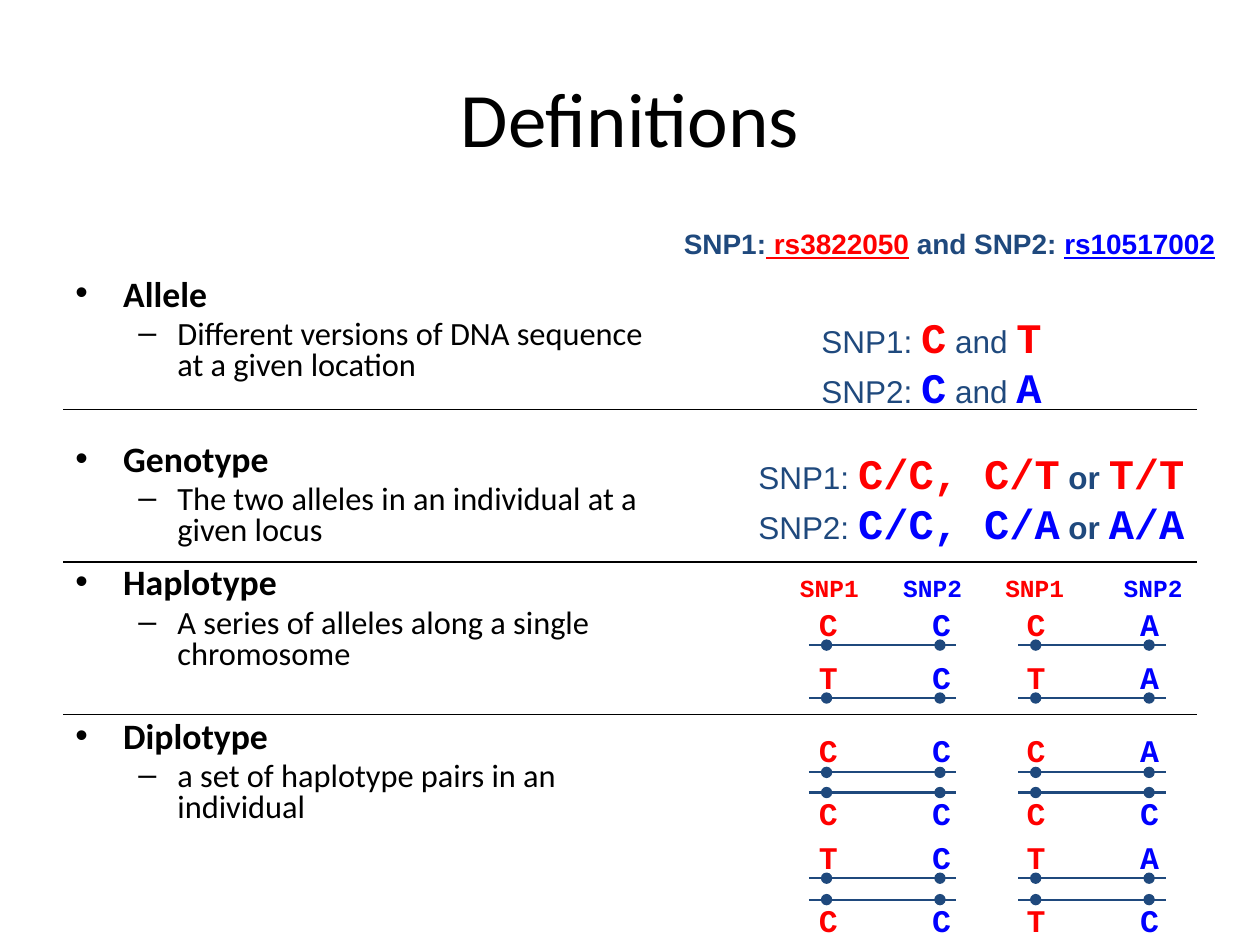
from dataclasses import dataclass
from lxml import etree
from pptx import Presentation
from pptx.dml.color import RGBColor
from pptx.enum.shapes import MSO_CONNECTOR, MSO_SHAPE
from pptx.enum.text import MSO_ANCHOR, PP_ALIGN
from pptx.oxml.ns import qn
from pptx.util import Inches, Pt

STRAIGHT = MSO_CONNECTOR.STRAIGHT
OVAL = MSO_SHAPE.OVAL
MIDDLE = MSO_ANCHOR.MIDDLE
CENTER = PP_ALIGN.CENTER


@dataclass(frozen=True)
class Theme:
    black: str = "000000"
    navy: str = "1F497D"
    red: str = "FF0000"
    blue: str = "0000FF"
    body: str = "Calibri"
    sans: str = "Arial"
    mono: str = "Courier New"
    title: float = 44
    heading: float = 20.4
    detail: float = 18.5
    allele: float = 24
    label: float = 18
    source: float = 16
    column: float = 14


T = Theme()

prs = Presentation()
prs.slide_width, prs.slide_height = Inches(10), Inches(7.5)
s = prs.slides.add_slide(prs.slide_layouts[6])


def add_text(box, paragraphs):
    tf = s.shapes.add_textbox(*[Inches(v) for v in box]).text_frame
    tf.word_wrap = True
    for i, runs in enumerate(paragraphs):
        p = tf.paragraphs[0] if i == 0 else tf.add_paragraph()
        for text, size, font, color, bold in runs:
            r = p.add_run()
            r.text = text
            r.font.size, r.font.name, r.font.bold = Pt(size), font, bold
            r.font.color.rgb = RGBColor.from_string(color)
    return tf


def add_line(shapes, x1, x2, y, color, width):
    line = shapes.add_connector(STRAIGHT, Inches(x1), Inches(y), Inches(x2), Inches(y))
    line.line.color.rgb = RGBColor.from_string(color)
    line.line.width = Pt(width)
    etree.SubElement(line._element.spPr, qn("a:effectLst"))


tf = add_text((0.5, 0.3, 9, 1.25), [[("Definitions", T.title, T.body, T.black, False)]])
tf.vertical_anchor = MIDDLE
tf.paragraphs[0].alignment = CENTER

definitions = [
    ("Allele", "Different versions of DNA sequence at a given location", 1),
    ("Genotype", "The two alleles in an individual at a given locus", 35.7),
    ("Haplotype", "A series of alleles along a single chromosome", 11.7),
    ("Diplotype", "a set of haplotype pairs in an individual", 28.9),
]
paragraphs, layout = [], []
for term, meaning, gap in definitions:
    paragraphs.append([(term, T.heading, T.body, T.black, True)])
    paragraphs.append([(meaning, T.detail, T.body, T.black, False)])
    layout += [(0, 0.38, 0.38, "•", gap), (1, 0.81, 0.31, "–", 3.7)]
tf = add_text((0.5, 2.17, 4.83, 4.92), paragraphs)
for p, (level, margin, hang, bullet, gap) in zip(tf.paragraphs, layout):
    p.level = level
    p.line_spacing = 0.8
    p.space_before = Pt(gap)
    pPr = p._p.get_or_add_pPr()
    pPr.set("marL", str(Inches(margin)))
    pPr.set("indent", str(-Inches(hang)))
    etree.SubElement(pPr, qn("a:buFont"), typeface=T.sans)
    etree.SubElement(pPr, qn("a:buChar"), char=bullet)

for y in (3.25, 4.46, 5.67):
    add_line(s.shapes, 0.5, 9.5, y, T.black, 0.75)

tf = add_text((5.33, 1.75, 4.67, 0.37), [[
    ("SNP1:", T.source, T.sans, T.navy, True),
    (" rs3822050", T.source, T.sans, T.red, True),
    (" and SNP2: ", T.source, T.sans, T.navy, True),
    ("rs10517002", T.source, T.sans, T.blue, True),
]])
for r in tf.paragraphs[0].runs[1::2]:
    r.font.underline = True

snps = [
    ("SNP1: ", T.red, "C", "T", "C/C, C/T", "T/T"),
    ("SNP2: ", T.blue, "C", "A", "C/C, C/A", "A/A"),
]
alleles, genotypes = [], []
for name, color, first, second, pairs, last in snps:
    label = (name, T.label, T.sans, T.navy, False)
    alleles.append([
        label,
        (first, T.allele, T.mono, color, True),
        (" and ", T.label, T.sans, T.navy, False),
        (second, T.allele, T.mono, color, True),
    ])
    genotypes.append([
        label,
        (pairs, T.allele, T.mono, color, True),
        (" or ", T.label, T.sans, T.navy, True),
        (last, T.allele, T.mono, color, True),
    ])
add_text((6.42, 2.42, 2.92, 0.9), alleles)
add_text((5.92, 3.5, 3.67, 0.9), genotypes)

letter_tabs = (0.15, 1.05, 1.8, 2.7)
rows = [
    (4.5, 3.25, T.column, 2, (0.82, 1.63, 2.57), ("SNP1", "\tSNP2", "\tSNP1", "\tSNP2")),
]
for y, letters in [(4.75, "CCCA"), (5.17, "TCTA"), (5.75, "CCCA"),
                   (6.25, "CCCC"), (6.6, "TCTA"), (7.1, "CCTC")]:
    rows.append((y, 3.17, T.label, 3, letter_tabs, ["\t" + c for c in letters]))
for y, width, size, gap, tabs, words in rows:
    colors = (T.red, T.blue) * 2
    tf = add_text((6.25, y, width, 0.4),
                  [[(w, size, T.mono, c, True) for w, c in zip(words, colors)]])
    p = tf.paragraphs[0]
    p.space_before = Pt(gap)
    tab_list = etree.SubElement(p._p.get_or_add_pPr(), qn("a:tabLst"))
    for x in tabs:
        etree.SubElement(tab_list, qn("a:tab"), pos=str(Inches(x)), algn="l")

dot_size = 0.08
for y in (5.12, 5.54, 6.13, 6.29, 6.97, 7.14):
    for x in (6.42, 8.08):
        strand = s.shapes.add_group_shape()
        add_line(strand.shapes, x, x + 1.17, y, T.navy, 1.25)
        for offset in (0.1, 1):
            dot = strand.shapes.add_shape(OVAL, Inches(x + offset), Inches(y - dot_size / 2),
                                          Inches(dot_size), Inches(dot_size))
            dot.shadow.inherit = False
            dot.fill.solid()
            dot.fill.fore_color.rgb = RGBColor.from_string(T.navy)
            dot.line.color.rgb = RGBColor.from_string(T.navy)
            dot.line.width = Pt(0.75)

prs.save("out.pptx")
